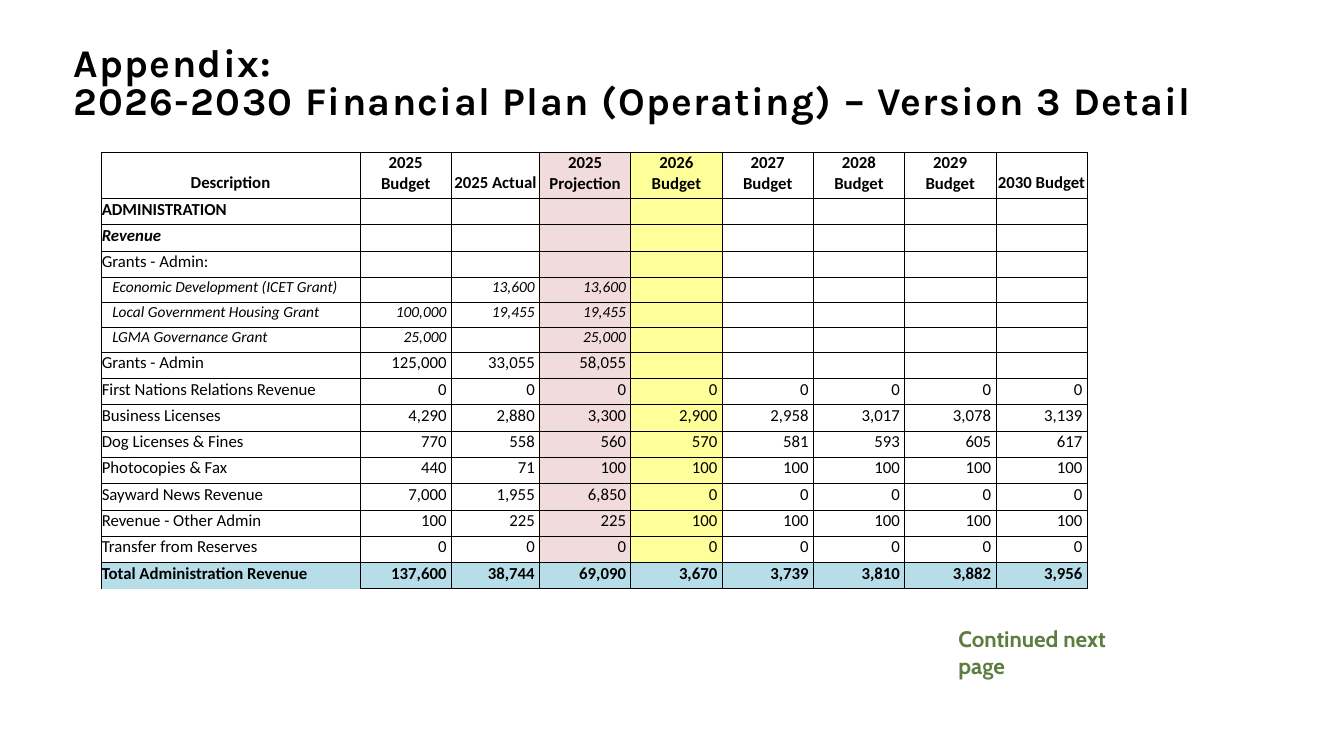
from lxml.etree import SubElement
from pptx import Presentation
from pptx.dml.color import RGBColor
from pptx.enum.text import MSO_ANCHOR, MSO_AUTO_SIZE, PP_ALIGN
from pptx.oxml.ns import qn
from pptx.util import Pt

BLACK = RGBColor(0x00, 0x00, 0x00)
GREEN = RGBColor(0x5D, 0x7D, 0x40)
PINK = RGBColor(0xF2, 0xDC, 0xDB)
YELLOW = RGBColor(0xFF, 0xFF, 0x99)
BLUE = RGBColor(0xB7, 0xDE, 0xE8)

HEADS = ["Description", "2025\vBudget", "2025 Actual", "2025 Projection",
         "2026\vBudget", "2027\vBudget", "2028\vBudget", "2029\vBudget",
         "2030 Budget"]
ROWS = [
    ("head", HEADS),
    ("bold", ["ADMINISTRATION"]),
    ("group", ["Revenue"]),
    ("item", ["Grants - Admin:"]),
    ("sub", ["Economic Development (ICET Grant)", "", "13,600", "13,600"]),
    ("sub", ["Local Government Housing Grant", "100,000", "19,455", "19,455"]),
    ("sub", ["LGMA Governance Grant", "25,000", "", "25,000"]),
    ("item", ["Grants - Admin", "125,000", "33,055", "58,055"]),
    ("item", ["First Nations Relations Revenue"] + ["0"] * 8),
    ("item", ["Business Licenses", "4,290", "2,880", "3,300", "2,900",
              "2,958", "3,017", "3,078", "3,139"]),
    ("item", ["Dog Licenses & Fines", "770", "558", "560", "570",
              "581", "593", "605", "617"]),
    ("item", ["Photocopies & Fax", "440", "71"] + ["100"] * 6),
    ("item", ["Sayward News Revenue", "7,000", "1,955", "6,850"] + ["0"] * 5),
    ("item", ["Revenue - Other Admin", "100", "225", "225"] + ["100"] * 5),
    ("item", ["Transfer from Reserves"] + ["0"] * 8),
    ("total", ["Total Administration Revenue", "137,600", "38,744", "69,090",
               "3,670", "3,739", "3,810", "3,882", "3,956"]),
]
WIDTHS = [185, 65.2, 63] + [65.2] * 6
HEIGHTS = {"head": 32.8, "sub": 17.8}
TINTS = {3: PINK, 4: YELLOW}


def style(run, face, size, color, bold=True, slant=False):
    font = run.font
    font.name, font.size = face, Pt(size)
    font.bold, font.italic = bold, slant
    font.color.rgb = color


def add_text(slide, box, text, face, size, color):
    shape = slide.shapes.add_textbox(*[Pt(n) for n in box])
    frame = shape.text_frame
    frame.word_wrap = True
    frame.text = text
    for run in frame.paragraphs[0].runs:
        style(run, face, size, color)
    return frame


def add_title(slide, box):
    frame = add_text(slide, box, "Appendix:\v2026-2030 Financial Plan "
                     "(Operating) – Version 3 Detail", "Karla", 28, BLACK)
    frame.margin_left = frame.margin_right = 0
    frame.margin_top = frame.margin_bottom = 0
    frame.vertical_anchor = MSO_ANCHOR.BOTTOM
    line = frame.paragraphs[0]
    line.line_spacing = 0.8
    for run in line.runs:
        run.font._element.set("spc", "100")


def add_note(slide, box):
    frame = add_text(slide, box, "Continued next page", "Cabin", 16, GREEN)
    frame.auto_size = MSO_AUTO_SIZE.SHAPE_TO_FIT_TEXT


def add_edges(cell, sides):
    props = cell._tc.get_or_add_tcPr()
    for side, width in sides.items():
        edge = SubElement(props, qn("a:ln" + side), w=str(Pt(width)))
        if width:
            fill = SubElement(edge, qn("a:solidFill"))
            SubElement(fill, qn("a:srgbClr"), val=str(BLACK))
        else:
            SubElement(edge, qn("a:noFill"))


def fill_cell(cell, kind, col, text):
    size = 11 if kind == "sub" else 12
    cell.vertical_anchor = MSO_ANCHOR.BOTTOM
    cell.margin_top = Pt(0.5)
    cell.margin_bottom = Pt(3.6)
    cell.margin_left = Pt(8 if kind == "sub" and col == 0 else 0.5)
    cell.margin_right = Pt(3.4 if col and kind != "head" else 0.5)
    cell.text_frame.text = text
    line = cell.text_frame.paragraphs[0]
    if kind == "head":
        line.alignment = PP_ALIGN.CENTER
    else:
        line.alignment = PP_ALIGN.RIGHT if col else PP_ALIGN.LEFT
    for run in line.runs:
        style(run, "Calibri", size, BLACK, kind in ("head", "bold", "group", "total"),
              kind in ("group", "sub"))
    if not text:
        SubElement(line._p, qn("a:endParaRPr"), sz=str(size * 100))
    tint = BLUE if kind == "total" else TINTS.get(col)
    if tint is None:
        cell.fill.background()
    else:
        cell.fill.solid()
        cell.fill.fore_color.rgb = tint


def add_plan(slide, box):
    frame = slide.shapes.add_table(len(ROWS), len(HEADS), *[Pt(n) for n in box])
    table = frame.table
    table.first_row = table.horz_banding = False
    for col, width in zip(table.columns, WIDTHS):
        col.width = Pt(width)
    last = len(ROWS) - 1
    for r, (kind, texts) in enumerate(ROWS):
        table.rows[r].height = Pt(HEIGHTS.get(kind, 18.8))
        for c in range(len(HEADS)):
            cell = table.cell(r, c)
            sides = dict.fromkeys("LRTB", 0.5)
            if r == last:
                sides["T"] = 1
                if c == 0:
                    sides["B"] = 0
            elif r == last - 1:
                sides["B"] = 1
            add_edges(cell, sides)
            fill_cell(cell, kind, c, texts[c] if c < len(texts) else "")


def main():
    deck = Presentation()
    deck.slide_width, deck.slide_height = Pt(960), Pt(540)
    slide = deck.slides.add_slide(deck.slide_layouts[6])
    add_title(slide, (52.6, -8.6, 833, 96.5))
    add_note(slide, (677.5, 442.8, 154, 46))
    add_plan(slide, (72.2, 108.8, 704.2, 311))
    deck.save("out.pptx")


if __name__ == "__main__":
    main()
